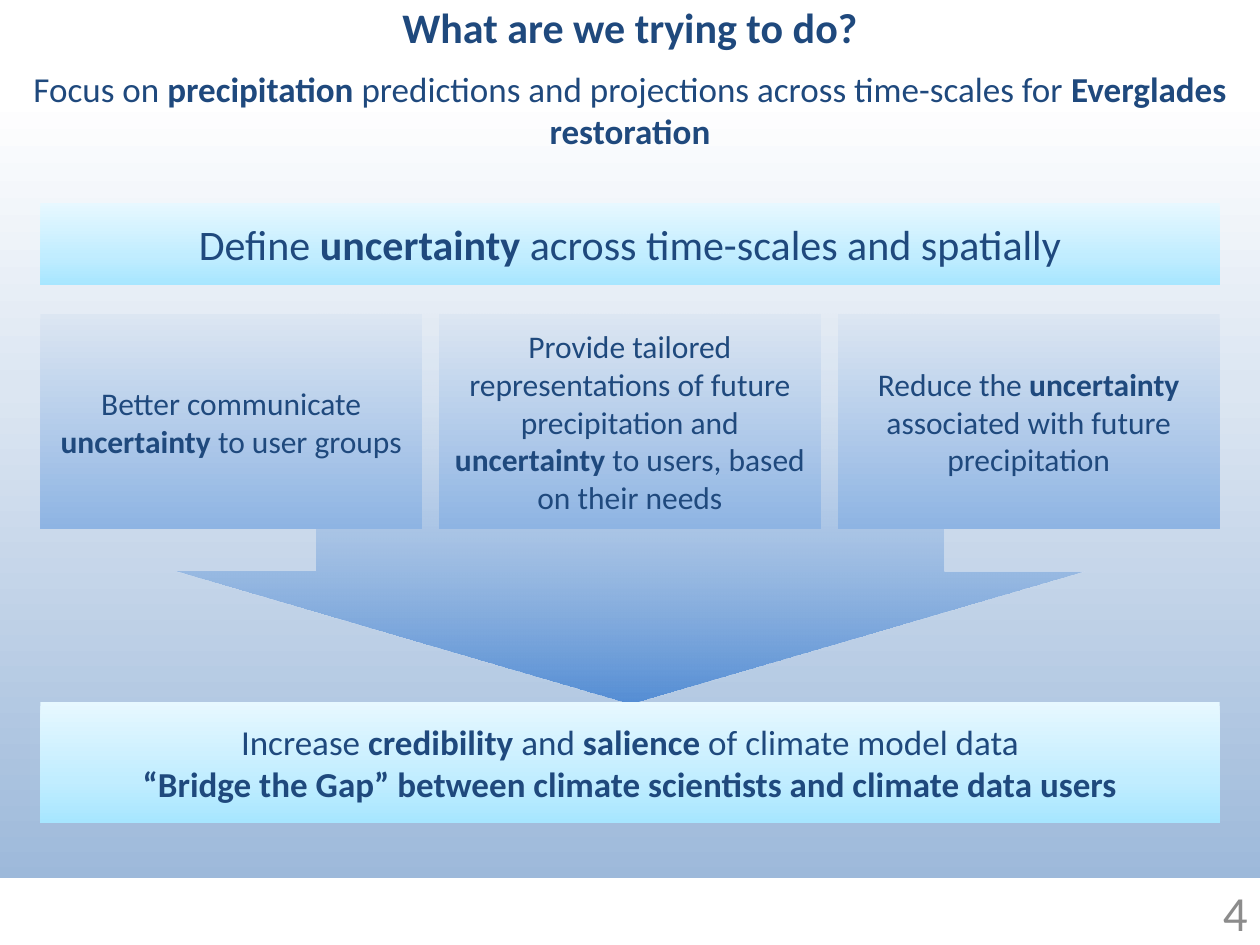
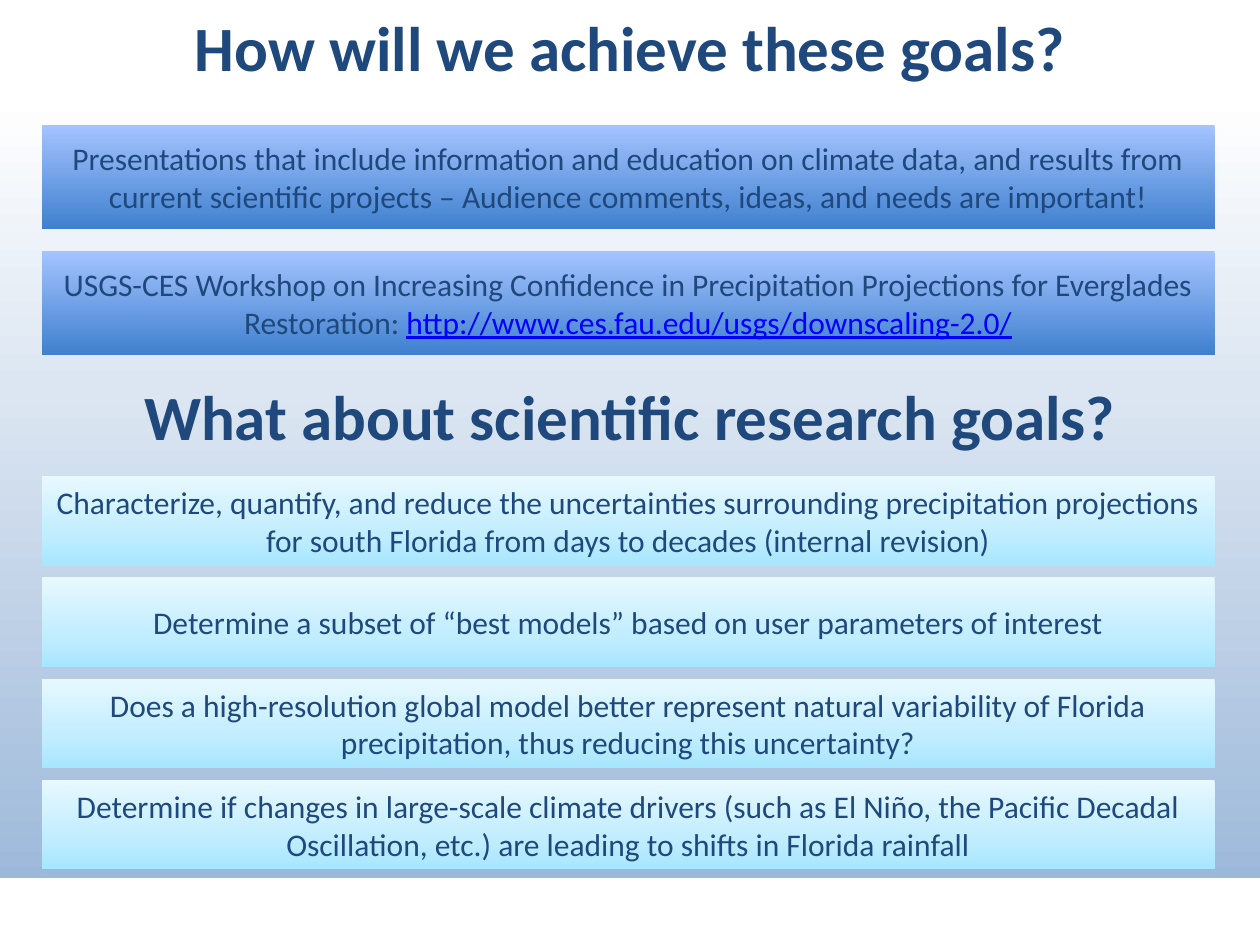
"""Build two slides on the goals of Everglades precipitation research."""
import pptx
import pptx.util
import pptx.dml.color
import pptx.enum.shapes
import pptx.enum.text
import pptx.oxml
import pptx.oxml.ns

SHAPE = pptx.enum.shapes.MSO_SHAPE
ALIGN = pptx.enum.text.PP_ALIGN
FONT = "Calibri"
CELL = pptx.util.Inches(0.1)
COLUMNS, ROWS = 100, 75
COLORS = {"ink": "1F497D", "link": "0000FF", "number": "8C8C8C", "white": "FFFFFF"}
GRADIENTS = {
    "backdrop": [(10, "FFFFFF"), (41, "DCE6F2"), (100, "95B3D7")],
    "cyan": [(0, "E7F8FF"), (65, "C1EDFF"), (100, "A7E6FF")],
    "pale": [(0, "DCE6F2"), (100, "8EB4E3")],
    "blue": [(0, "A4C4FF"), (100, "3F80CE")],
    "arrow": [(0, "DCE6F2", 0), (100, "558ED5")],
}


def color(name):
    """Return the named colour."""
    return pptx.dml.color.RGBColor.from_string(COLORS[name])


def fill_gradient(shape, stops):
    """Fill a shape from top to bottom with (percent, colour, opacity) stops."""
    marks = ""
    for position, shade, *opacity in stops:
        alpha = f'<a:alpha val="{opacity[0] * 1000}"/>' if opacity else ""
        marks += f'<a:gs pos="{position * 1000}"><a:srgbClr val="{shade}">{alpha}</a:srgbClr></a:gs>'
    gradient = pptx.oxml.parse_xml(
        f'<a:gradFill {pptx.oxml.ns.nsdecls("a")} rotWithShape="1"><a:gsLst>{marks}</a:gsLst>'
        '<a:lin ang="5400000" scaled="0"/></a:gradFill>')
    shape.fill.background()
    properties = shape._element.spPr
    properties.replace(properties.find(pptx.oxml.ns.qn("a:noFill")), gradient)


def add_block(page, left, top, width, height, fill, kind=SHAPE.RECTANGLE):
    """Draw a borderless shape, measured in grid cells."""
    box = page.shapes.add_shape(kind, *(round(cells * CELL) for cells in (left, top, width, height)))
    box.shadow.inherit = False
    box.line.fill.background()
    if fill in GRADIENTS:
        fill_gradient(box, GRADIENTS[fill])
    else:
        box.fill.solid()
        box.fill.fore_color.rgb = color(fill)
    return box


def add_label(page, left, top, width, height):
    """Place a text box, measured in grid cells, without vertical insets."""
    box = page.shapes.add_textbox(*(round(cells * CELL) for cells in (left, top, width, height)))
    box.text_frame.margin_top = box.text_frame.margin_bottom = 0
    return box


def write(box, paragraphs, ink="ink", align=ALIGN.CENTER):
    """Fill a box with (size, *pieces); a piece is text or (text, style)."""
    frame = box.text_frame
    frame.word_wrap = True
    frame.vertical_anchor = pptx.enum.text.MSO_ANCHOR.MIDDLE
    for index, (size, *pieces) in enumerate(paragraphs):
        para = frame.add_paragraph() if index else frame.paragraphs[0]
        para.alignment = align
        for piece in pieces:
            text, style = (piece, "plain") if isinstance(piece, str) else piece
            span = para.add_run()
            span.text = text
            span.font.name = FONT
            span.font.size = pptx.util.Pt(size)
            span.font.bold = style == "bold"
            span.font.underline = style == "link"
            span.font.color.rgb = color("link" if style == "link" else ink)
    return frame


def add_stack(page, top, height, pitch, fill, entries):
    """Draw full-width bars one below the other at an equal pitch."""
    for index, pieces in enumerate(entries):
        bar = add_block(page, 3.3, top + index * pitch, 93.1, height, fill)
        write(bar, [(18, *pieces)])


def add_heading(page, top, text):
    """Write a large bold heading across the page."""
    write(add_label(page, 0, top, COLUMNS, 7.4), [(36, (text, "bold"))])


def add_page(deck):
    """Add a blank page with the shared backdrop and footer band."""
    page = deck.slides.add_slide(deck.slide_layouts[6])
    add_block(page, 0, 0, COLUMNS, ROWS, "backdrop")
    add_block(page, 0, 69.7, COLUMNS, 5.3, "white")
    return page


def build_aims(deck):
    """Build the page on what the project is trying to do."""
    page = add_page(deck)
    margin, gap = 3.2, 1.35
    width = COLUMNS - 2 * margin
    arrow = add_block(page, 13.9, 24.9, 72.2, 30.9, "arrow", SHAPE.DOWN_ARROW)
    arrow.adjustments[0], arrow.adjustments[1] = 0.69, 0.34

    title = write(add_label(page, 0, 0, COLUMNS, 12.2), [
        (24, ("What are we trying to do?", "bold")),
        (20, "Focus on ", ("precipitation", "bold"),
         " predictions and projections across time-scales for ",
         ("Everglades restoration", "bold"))])
    title.paragraphs[1].space_before = pptx.util.Pt(9)

    write(add_block(page, margin, 16.1, width, 6.5, "cyan"), [
        (24, "Define ", ("uncertainty", "bold"), " across time-scales and spatially")])

    aims = [("Better communicate ", " to user groups"),
            ("Provide tailored representations of future precipitation and ",
             " to users, based on their needs"),
            ("Reduce the ", " associated with future precipitation")]
    aim_width = (width - gap * (len(aims) - 1)) / len(aims)
    for index, (before, after) in enumerate(aims):
        left = margin + index * (aim_width + gap)
        write(add_block(page, left, 24.9, aim_width, 17.1, "pale"),
              [(18, before, ("uncertainty", "bold"), after)])

    write(add_block(page, margin, 55.7, width, 9.6, "cyan"), [
        (20, "Increase ", ("credibility ", "bold"), "and", (" salience", "bold"),
         " of climate model data"),
        (20, ("“Bridge the Gap” between climate scientists and climate data users", "bold"))])
    write(add_label(page, 76.7, 69.7, 23.3, 5.3), [(28, "4")], "number", ALIGN.RIGHT)


def build_methods(deck):
    """Build the page on how the goals are reached and the research goals."""
    page = add_page(deck)
    add_heading(page, 0, "How will we achieve these goals?")
    add_stack(page, 9.9, 8.3, 10, "blue", [
        ["Presentations that include information and education on climate data, and results "
         "from current scientific projects – Audience comments, ideas, and needs are important!"],
        ["USGS-CES Workshop on Increasing Confidence in Precipitation Projections for "
         "Everglades Restoration: ", ("http://www.ces.fau.edu/usgs/downscaling-2.0/", "link")]])
    add_heading(page, 29.3, "What about scientific research goals?")
    add_stack(page, 37.8, 7.1, 8.03, "cyan", [
        ["Characterize, quantify, and reduce the uncertainties surrounding precipitation "
         "projections for south Florida from days to decades (internal revision)"],
        ["Determine a subset of “best models” based on user parameters of interest"],
        ["Does a high-resolution global model better represent natural variability of Florida "
         "precipitation, thus reducing this uncertainty?"],
        ["Determine if changes in large-scale climate drivers (such as El Niño, the Pacific "
         "Decadal Oscillation, etc.) are leading to shifts in Florida rainfall"]])


def main():
    """Build and save the deck."""
    deck = pptx.Presentation()
    deck.slide_width, deck.slide_height = COLUMNS * CELL, ROWS * CELL
    build_aims(deck)
    build_methods(deck)
    deck.save("out.pptx")


if __name__ == "__main__":
    main()
